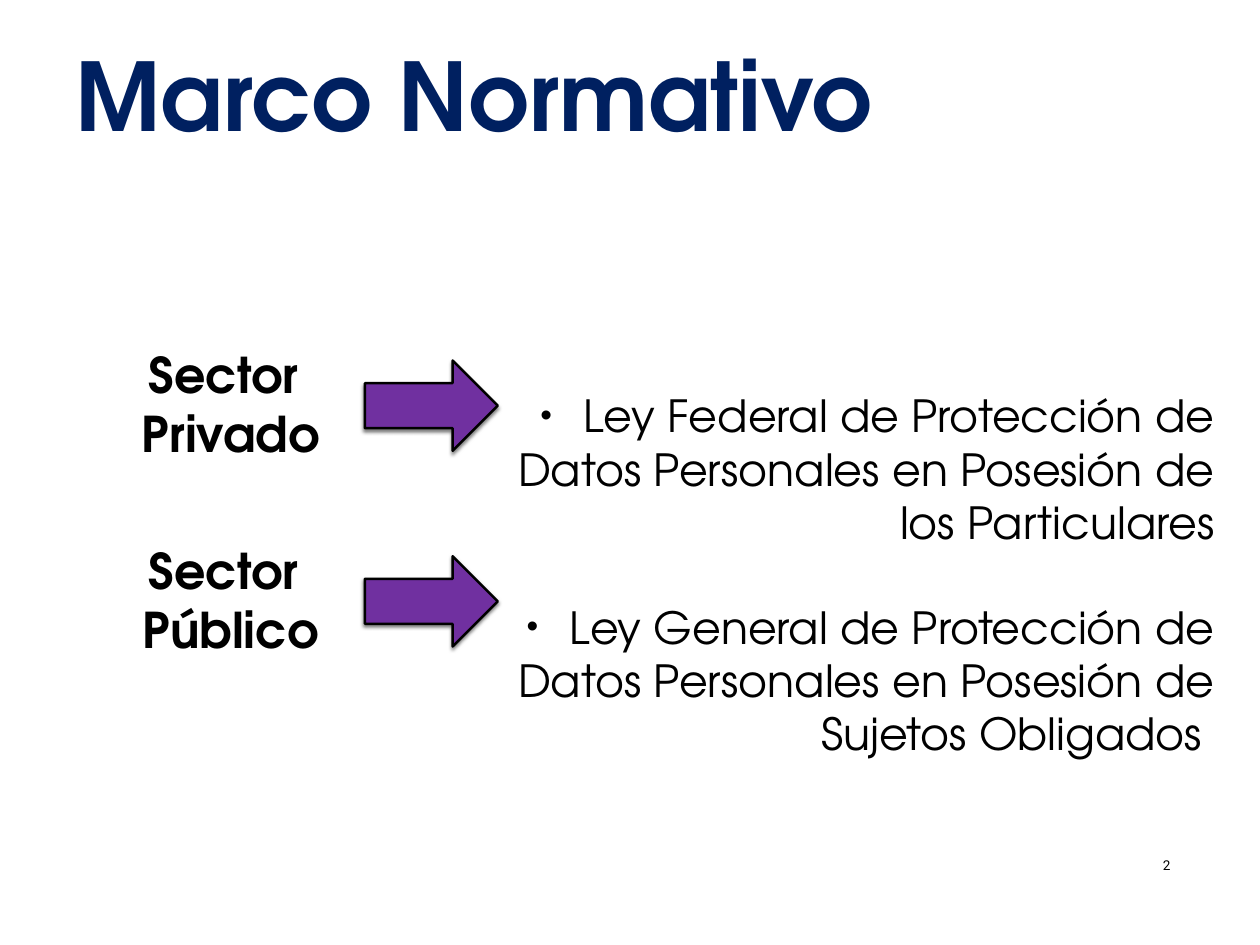
from lxml.etree import SubElement
from pptx import Presentation
from pptx.dml.color import RGBColor
from pptx.enum.shapes import MSO_SHAPE
from pptx.enum.text import MSO_ANCHOR, MSO_AUTO_SIZE, PP_ALIGN
from pptx.oxml.ns import qn
from pptx.util import Pt

NAVY = RGBColor(0x00, 0x20, 0x60)
PURPLE = RGBColor(0x70, 0x30, 0xA0)
BLACK = RGBColor(0x00, 0x00, 0x00)

LAWS = [
    "Ley Federal de Protección de Datos Personales en Posesión de los Particulares",
    "Ley General de Protección de Datos Personales en Posesión de Sujetos Obligados ",
]
SECTORS = ["Privado", "Público"]
SECTOR_TOP = 276.5
SECTOR_STEP = 159


class SlideBuilder:
    """Holds the style and the current slide, and adds each kind of element."""

    heading_font = "TeX Gyre Adventor"
    number_font = "Roboto"

    def __init__(self, presentation):
        self.slide = presentation.slides.add_slide(presentation.slide_layouts[1])

    def place(self, shape, left, top, width, height):
        shape.left, shape.top = Pt(left), Pt(top)
        shape.width, shape.height = Pt(width), Pt(height)

    def add_text(self, paragraph, text, size, color=BLACK, bold=False, font=heading_font):
        run = paragraph.add_run()
        run.text = text
        run.font.name = font
        run.font.size = Pt(size)
        run.font.bold = bold
        run.font.color.rgb = color

    def prepare(self, placeholder):
        frame = placeholder.text_frame
        frame.margin_left = frame.margin_right = 0
        frame.margin_top = frame.margin_bottom = 0
        frame.vertical_anchor = MSO_ANCHOR.MIDDLE
        frame.word_wrap = True
        frame.auto_size = MSO_AUTO_SIZE.NONE
        return frame

    def title(self, text, *box):
        title = self.slide.shapes.title
        self.place(title, *box)
        paragraph = self.prepare(title).paragraphs[0]
        paragraph.alignment = PP_ALIGN.CENTER
        self.add_text(paragraph, text, 76.8, NAVY, True)

    def bullets(self, items, *box):
        body = self.slide.placeholders[1]
        self.place(body, *box)
        frame = self.prepare(body)
        for index, item in enumerate(items):
            paragraph = frame.add_paragraph() if index else frame.paragraphs[0]
            paragraph.alignment = PP_ALIGN.RIGHT
            paragraph.space_before = Pt(42 if index else 0)
            properties = paragraph._p.get_or_add_pPr()
            properties.set("marL", str(Pt(35)))
            properties.set("indent", str(-Pt(35)))
            SubElement(properties, qn("a:buSzPct"), val="75000")
            SubElement(properties, qn("a:buChar"), char="•")
            self.add_text(paragraph, item, 36)

    def text_box(self, *box, wrap):
        frame = self.slide.shapes.add_textbox(*map(Pt, box)).text_frame
        frame.word_wrap = wrap
        frame.auto_size = MSO_AUTO_SIZE.SHAPE_TO_FIT_TEXT
        return frame

    def label(self, lines, *box):
        frame = self.text_box(*box, wrap=False)
        for index, line in enumerate(lines):
            paragraph = frame.add_paragraph() if index else frame.paragraphs[0]
            paragraph.alignment = PP_ALIGN.CENTER
            self.add_text(paragraph, line, 40, bold=True)

    def arrow(self, *box):
        arrow = self.slide.shapes.add_shape(MSO_SHAPE.RIGHT_ARROW, *map(Pt, box))
        arrow.fill.solid()
        arrow.fill.fore_color.rgb = PURPLE
        arrow.line.color.rgb = BLACK
        arrow.line.width = Pt(2)
        arrow.shadow.inherit = False
        effects = arrow._element.spPr.find(qn("a:effectLst"))
        shadow = SubElement(effects, qn("a:outerShdw"), blurRad=str(Pt(3)),
                            dist=str(Pt(2)), dir="5400000", rotWithShape="0")
        color = SubElement(shadow, qn("a:srgbClr"), val=str(BLACK))
        SubElement(color, qn("a:alpha"), val="50000")

    def page_number(self, text, *box):
        frame = self.text_box(*box, wrap=True)
        self.add_text(frame.paragraphs[0], text, 11, font=self.number_font)


def main():
    presentation = Presentation()
    presentation.slide_width = Pt(1024)
    presentation.slide_height = Pt(768)
    builder = SlideBuilder(presentation)
    builder.title("Marco Normativo", 14.4, 36.7, 741.6, 78.5)
    builder.bullets(LAWS, 385, 409.5, 602, 114)
    for index, sector in enumerate(SECTORS):
        top = SECTOR_TOP + index * SECTOR_STEP
        builder.label(["Sector ", sector], 107.5, top, 160, 104.4)
        builder.arrow(296.6, top + 16.5, 108, 73.4)
    builder.page_number("2", 938, 692.6, 73.4, 21)
    presentation.save("out.pptx")


if __name__ == "__main__":
    main()
